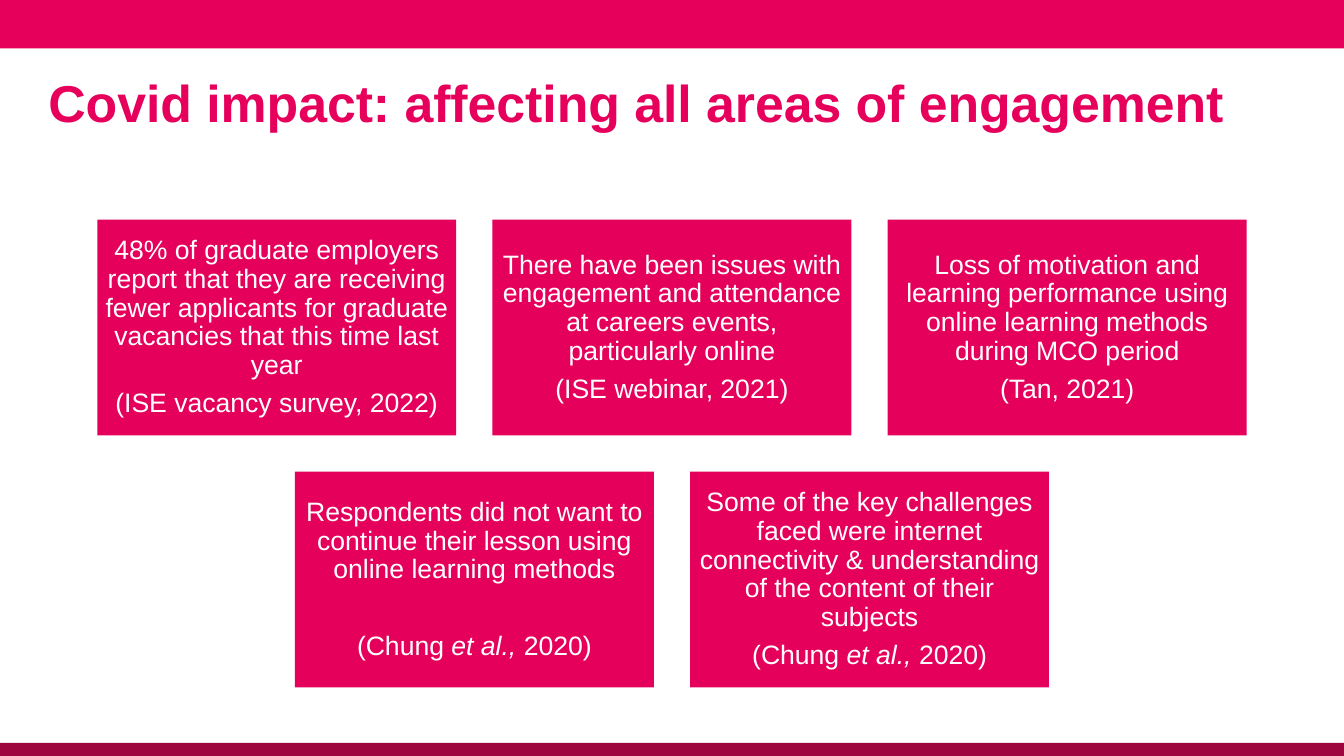
import pptx
import pptx.util
import pptx.dml.color
import pptx.enum.shapes
import pptx.enum.text

Inches = pptx.util.Inches
Pt = pptx.util.Pt
RGBColor = pptx.dml.color.RGBColor
PP_ALIGN = pptx.enum.text.PP_ALIGN

PINK = RGBColor(0xE6, 0x00, 0x5B)
CARD_PINK = RGBColor(0xE5, 0x00, 0x5B)
DARK_PINK = RGBColor(0x9E, 0x04, 0x3D)
WHITE = RGBColor(0xFF, 0xFF, 0xFF)

SLIDE_W, SLIDE_H = 13.33, 7.5
CARD_W, CARD_H, GAP = 3.56, 2.14, 0.36
CARDS_TOP = 2.18


def add_text(p, text, size=19, color=WHITE, bold=False, italic=False, align=PP_ALIGN.CENTER):
    p.alignment = align
    p.line_spacing = 0.9
    r = p.add_run()
    r.text = text
    r.font.name = "Arial"
    r.font.size = Pt(size)
    r.font.bold = bold
    r.font.italic = italic
    r.font.color.rgb = color


def add_rect(left, top, width, height, color):
    sp = s.shapes.add_shape(pptx.enum.shapes.MSO_SHAPE.RECTANGLE,
                            Inches(left), Inches(top), Inches(width), Inches(height))
    sp.shadow.inherit = False
    sp.fill.solid()
    sp.fill.fore_color.rgb = color
    sp.line.fill.background()
    return sp


prs = pptx.Presentation()
prs.slide_width = Inches(SLIDE_W)
prs.slide_height = Inches(SLIDE_H)
s = prs.slides.add_slide(prs.slide_layouts[6])

add_rect(0, 0, SLIDE_W, 0.48, PINK)
add_rect(0, 7.37, SLIDE_W, 0.13, DARK_PINK)

title = s.shapes.add_textbox(Inches(0.48), Inches(0.5), Inches(12.36), Inches(1.1))
tf = title.text_frame
tf.word_wrap = True
tf.margin_left = 0
tf.vertical_anchor = pptx.enum.text.MSO_ANCHOR.MIDDLE
add_text(tf.paragraphs[0], "Covid impact: affecting all areas of engagement",
         size=37, color=PINK, bold=True, align=PP_ALIGN.LEFT)

CHUNG = [("(Chung ", False), ("et al., ", True), ("2020)", False)]
card_rows = [
    [
        ("48% of graduate employers report that they are receiving fewer applicants "
         "for graduate vacancies that this time last year",
         [("(ISE vacancy survey, 2022)", False)], 6.65),
        ("There have been issues with engagement and attendance at careers events, "
         "particularly online",
         [("(ISE webinar, 2021)", False)], 6.65),
        ("Loss of motivation and learning performance using online learning methods "
         "during MCO period",
         [("(Tan, 2021)", False)], 6.65),
    ],
    [
        ("Respondents did not want to continue their lesson using online learning methods",
         CHUNG, 34),
        ("Some of the key challenges faced were internet connectivity & understanding "
         "of the content of their subjects",
         CHUNG, 6.65),
    ],
]

for row, cards in enumerate(card_rows):
    row_w = len(cards) * CARD_W + (len(cards) - 1) * GAP
    row_left = (SLIDE_W - row_w) / 2
    top = CARDS_TOP + row * (CARD_H + GAP)
    for col, (finding, citation, space_after) in enumerate(cards):
        sp = add_rect(row_left + col * (CARD_W + GAP), top, CARD_W, CARD_H, CARD_PINK)
        tf = sp.text_frame
        tf.word_wrap = True
        tf.vertical_anchor = pptx.enum.text.MSO_ANCHOR.MIDDLE
        tf.margin_left = tf.margin_right = Inches(0.08)
        tf.margin_top = tf.margin_bottom = Inches(0.08)
        p = tf.paragraphs[0]
        p.space_after = Pt(space_after)
        add_text(p, finding)
        p = tf.add_paragraph()
        for text, italic in citation:
            add_text(p, text, italic=italic)

prs.save("out.pptx")
